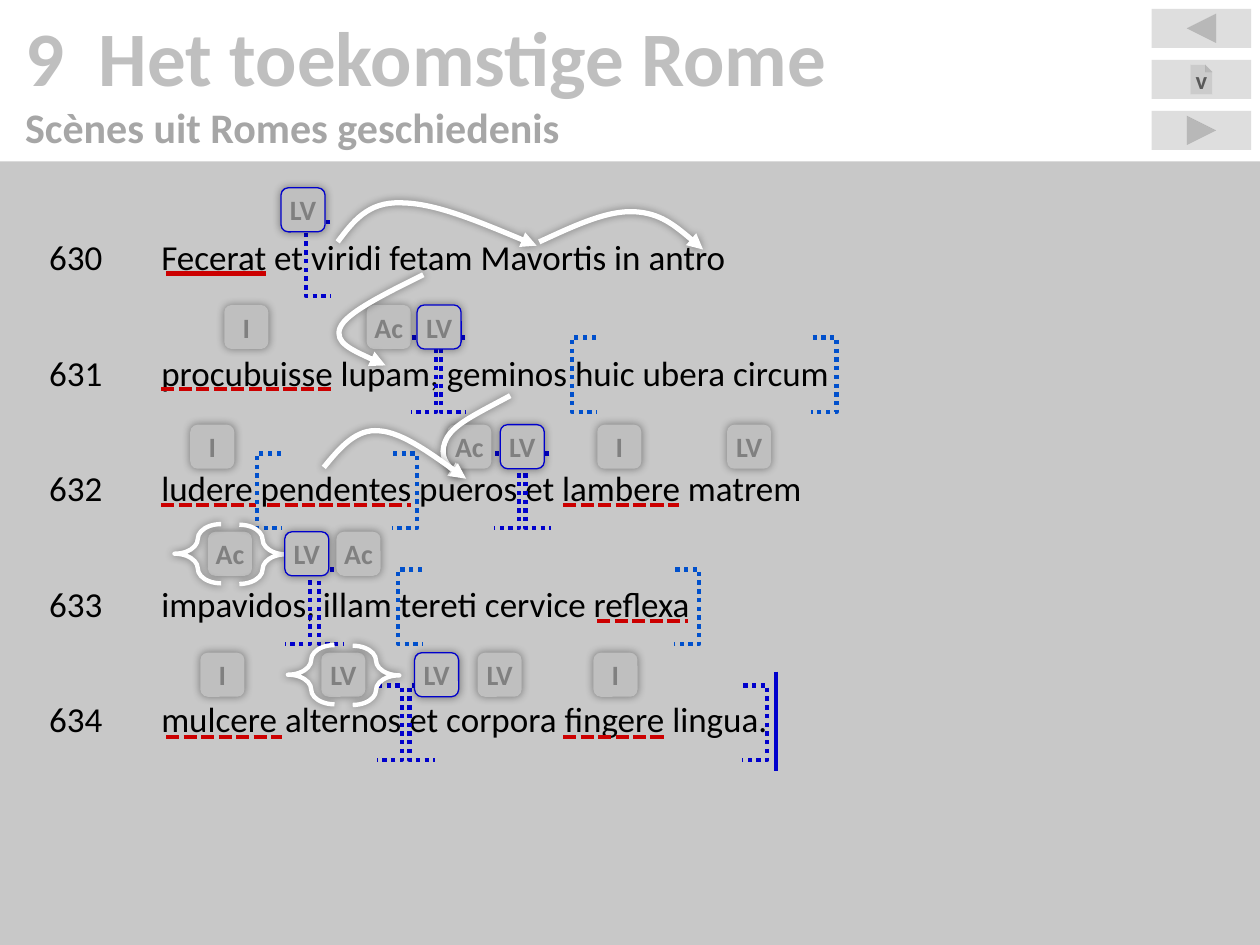
import pptx
import pptx.util
from lxml import etree
from pptx.dml.color import RGBColor
from pptx.enum.dml import MSO_LINE
from pptx.enum.shapes import MSO_CONNECTOR, MSO_SHAPE
from pptx.enum.text import MSO_ANCHOR, PP_ALIGN
from pptx.oxml.ns import qn

# The grid: 100 columns by 75 rows; every length below counts in these.
WIDTH, HEIGHT = pptx.util.Inches(10), pptx.util.Inches(7.5)
COLUMN, ROW = WIDTH / 100, HEIGHT / 75

FONT = "Calibri"
BLACK = RGBColor(0x00, 0x00, 0x00)
WHITE = RGBColor(0xFF, 0xFF, 0xFF)
GREY = RGBColor(0xBF, 0xBF, 0xBF)
SUBTITLE_GREY = RGBColor(0xA6, 0xA6, 0xA6)
TAG_GREY = RGBColor(0x80, 0x80, 0x80)
DARK_GREY = RGBColor(0x59, 0x59, 0x59)
RED = RGBColor(0xCC, 0x00, 0x00)
BLUE = RGBColor(0x00, 0x00, 0xCC)
LIGHT_BLUE = RGBColor(0x00, 0x50, 0xCC)

FIRST_VERSE, VERSE_PITCH = 12.5, 9.2
TAG_SIZE = 3.5

# Per verse: text, row of the tags, underlines (from, to, dash),
# brackets (column, direction, colour), tags (column, label, style), arrows (points).
VERSES = [
    ("630\tFecerat et viridi fetam Mavortis in antro", 2.4,
     [(13.2, 21.1, None)],
     [(24.3, 1, BLUE)],
     [(22.3, "LV", "outlined")],
     [[(26.8, 6.7), (28, 5.1), (29.2, 3.5), (31.8, 3.6), (34.5, 3.6), (38.5, 5.3), (42.6, 7)],
      [(42.8, 6.7), (45.4, 5.5), (48.1, 4.2), (50.3, 4.3), (52.4, 4.4), (54.1, 5.8), (55.8, 7.3)]]),
    ("631\tprocubuisse lupam, geminos huic ubera circum", 2.5,
     [(12.8, 26.3, MSO_LINE.SQUARE_DOT)],
     [(34.6, -1, BLUE), (35, 1, BLUE), (45.4, 1, LIGHT_BLUE), (66.4, -1, LIGHT_BLUE)],
     [(17.8, "I", "plain"), (29.1, "Ac", "plain"), (33.1, "LV", "outlined")],
     [[(33.6, 0.1), (30.6, 1.6), (27.5, 3.1), (27, 4.3), (26.5, 5.5), (28.6, 6.4), (30.6, 7.3)]]),
    ("632\tludere pendentes pueros et lambere matrem", 2.8,
     [(12.8, 20.3, MSO_LINE.SQUARE_DOT), (21.2, 32.6, MSO_LINE.SQUARE_DOT),
      (44.7, 53.9, MSO_LINE.SQUARE_DOT)],
     [(20.4, 1, LIGHT_BLUE), (33.1, -1, LIGHT_BLUE), (41.2, -1, BLUE), (41.7, 1, BLUE)],
     [(15.1, "I", "plain"), (35.5, "Ac", "plain"), (39.7, "LV", "outlined"),
      (47.4, "I", "plain"), (57.7, "LV", "plain")],
     [[(40.5, 0.5), (37.7, 2), (36.2, 2.7), (35.5, 3.8), (34.9, 4.9), (35.3, 6.4), (36.9, 7)],
      [(25.7, 6.2), (27, 4.6), (28.3, 3.1), (30.1, 3.3), (32, 3.4), (37, 7.1), (37, 7.1)]]),
    ("633\timpavidos, illam tereti cervice reflexa", 2.1,
     [(47.4, 54.6, MSO_LINE.SQUARE_DOT)],
     [(24.6, -1, BLUE), (25.3, 1, BLUE), (31.6, 1, LIGHT_BLUE), (55.5, -1, LIGHT_BLUE)],
     [(16.5, "Ac", "braced"), (22.6, "LV", "outlined"), (26.7, "Ac", "plain")],
     []),
    ("634\tmulcere alternos et corpora fingere lingua.", 2.5,
     [(13.2, 22.4, MSO_LINE.SQUARE_DOT), (44.7, 53, MSO_LINE.SQUARE_DOT)],
     [(31.9, -1, BLUE), (32.5, 1, BLUE), (60.9, -1, BLUE)],
     [(15.9, "I", "plain"), (25.5, "LV", "braced"), (32.9, "LV", "outlined"),
      (37.9, "LV", "plain"), (47.1, "I", "plain")],
     []),
]


def to_emu(x, y):
    return round(x * COLUMN), round(y * ROW)


def add_span(para, text, size, color, bold=False):
    span = para.add_run()
    span.text = text
    span.font.name, span.font.size = FONT, pptx.util.Pt(size)
    span.font.color.rgb, span.font.bold = color, bold


def style_line(line, color, width, dash=None):
    line.color.rgb, line.width = color, pptx.util.Pt(width)
    if dash is not None:
        line.dash_style = dash


def add_glow(shape):
    """Give the shape a soft shadow on all sides."""
    shape.shadow.inherit = False
    effects = shape.element.spPr.find(qn("a:effectLst"))
    glow = etree.SubElement(effects, qn("a:outerShdw"), blurRad=str(pptx.util.Pt(5)), dist="0", dir="0")
    color = etree.SubElement(glow, qn("a:srgbClr"), val="000000")
    etree.SubElement(color, qn("a:alpha"), val="40000")


def add_block(page, kind, box, opacity=100):
    left, top, width, height = box
    shape = page.shapes.add_shape(kind, *to_emu(left, top), *to_emu(width, height))
    shape.shadow.inherit = False
    shape.fill.solid()
    shape.fill.fore_color.rgb = GREY
    shape.line.fill.background()
    if opacity < 100:
        color = shape.element.spPr.find(qn("a:solidFill"))[0]
        etree.SubElement(color, qn("a:alpha"), val=str(opacity * 1000))
    return shape


def set_margins(frame, across, down):
    frame.margin_left = frame.margin_right = round(across * COLUMN)
    frame.margin_top = frame.margin_bottom = round(down * ROW)


def center_text(shape, text, size, color):
    frame = shape.text_frame
    set_margins(frame, 0, 0)
    frame.vertical_anchor = MSO_ANCHOR.MIDDLE
    frame.paragraphs[0].alignment = PP_ALIGN.CENTER
    add_span(frame.paragraphs[0], text, size, color, True)


def add_rule(page, start, end, color, dash=None):
    rule = page.shapes.add_connector(MSO_CONNECTOR.STRAIGHT, *to_emu(*start), *to_emu(*end))
    style_line(rule.line, color, 2.5, dash)
    etree.SubElement(rule.element.spPr, qn("a:effectLst"))


def add_outline(page, points):
    points = [to_emu(*point) for point in points]
    builder = page.shapes.build_freeform(*points[0], scale=1.0)
    builder.add_line_segments(points[1:], close=False)
    shape = builder.convert_to_shape()
    shape.fill.background()
    shape.shadow.inherit = False
    return shape


def add_bracket(page, x, top, direction, color):
    bottom = top + 5.9
    points = [(x + 1.9 * direction, top), (x, top), (x, bottom), (x + 2 * direction, bottom)]
    style_line(add_outline(page, points).line, color, 2.5, MSO_LINE.ROUND_DOT)


def add_arrow(page, points):
    """Draw a Bézier arrow: a start, then two handles and an end per curve."""
    arrow = add_outline(page, points)
    corners = list(arrow.element.iter(qn("a:lnTo")))
    track = corners[0].getparent()
    for first in range(0, len(corners), 3):
        curve = etree.SubElement(track, qn("a:cubicBezTo"))
        for corner in corners[first:first + 3]:
            curve.append(corner[0])
            track.remove(corner)
    style_line(arrow.line, WHITE, 3)
    etree.SubElement(arrow.element.spPr.find(qn("a:ln")), qn("a:tailEnd"), type="triangle")
    add_glow(arrow)


def add_brace(page, left, top, mirrored):
    brace = add_block(page, MSO_SHAPE.LEFT_BRACE, (left, top, 3.7, 4.7))
    brace.fill.background()
    brace.adjustments[0] = 0.352
    if mirrored:
        brace.element.spPr.find(qn("a:xfrm")).set("flipH", "1")
    style_line(brace.line, WHITE, 2.5)
    add_glow(brace)


def add_tag(page, left, top, label, style):
    tag = add_block(page, MSO_SHAPE.ROUNDED_RECTANGLE, (left, top, TAG_SIZE, TAG_SIZE))
    if style == "outlined":
        style_line(tag.line, BLUE, 0.75)
    add_glow(tag)
    center_text(tag, label, 16, TAG_GREY)
    if style == "braced":
        add_brace(page, left - 2.65, top - 0.6, False)
        add_brace(page, left + 2.5, top - 0.55, True)


def add_heading(page, box):
    left, top, width, height = box
    frame = page.shapes.add_textbox(*to_emu(left, top), *to_emu(width, height)).text_frame
    frame.word_wrap = True
    frame.vertical_anchor = MSO_ANCHOR.MIDDLE
    set_margins(frame, 2, 2)
    add_span(frame.paragraphs[0], "9  Het toekomstige Rome", 44, GREY, True)
    add_span(frame.add_paragraph(), "Scènes uit Romes geschiedenis", 24, SUBTITLE_GREY, True)


def add_poem(page, box):
    frame = add_block(page, MSO_SHAPE.RECTANGLE, box, 85).text_frame
    frame.word_wrap = True
    frame.vertical_anchor = MSO_ANCHOR.TOP
    set_margins(frame, 3.9, 5.9)
    for index, verse in enumerate(VERSES):
        para = frame.paragraphs[0] if index == 0 else frame.add_paragraph()
        para.alignment = PP_ALIGN.LEFT
        para.space_after = pptx.util.Pt(42)
        tabs = etree.SubElement(para._p.get_or_add_pPr(), qn("a:tabLst"))
        etree.SubElement(tabs, qn("a:tab"), pos=str(round(8.9 * COLUMN)), algn="l")
        add_span(para, verse[0], 20, BLACK)


def add_navigation(page, box):
    left, top, width, height = box
    kinds = [MSO_SHAPE.ACTION_BUTTON_BACK_OR_PREVIOUS, MSO_SHAPE.ACTION_BUTTON_DOCUMENT,
             MSO_SHAPE.ACTION_BUTTON_FORWARD_OR_NEXT]
    button_height = 3.1
    pitch = (height - button_height) / (len(kinds) - 1)
    for index, kind in enumerate(kinds):
        button = add_block(page, kind, (left, top + index * pitch, width, button_height), 50)
        if kind == MSO_SHAPE.ACTION_BUTTON_DOCUMENT:
            center_text(button, "v", 14, DARK_GREY)


def add_annotations(page, box, verse):
    left, top, width, height = box
    text, tag_row, underlines, brackets, tags, arrows = verse
    for start, end, dash in underlines:
        add_rule(page, (left + start, top + height), (left + end, top + height), RED, dash)
    for x, direction, color in brackets:
        add_bracket(page, left + x, top + 5.1, direction, color)
    for x, label, style in tags:
        add_tag(page, left + x, top + tag_row, label, style)
    for points in arrows:
        add_arrow(page, [(left + x, top + y) for x, y in points])


def main():
    deck = pptx.Presentation()
    deck.slide_width, deck.slide_height = WIDTH, HEIGHT
    page = deck.slides.add_slide(deck.slide_layouts[6])
    add_heading(page, (0, 0, 100, 12.8))
    add_poem(page, (0, 12.8, 100, 62.2))
    add_navigation(page, (91.4, 0.7, 7.9, 11.2))
    for index, verse in enumerate(VERSES):
        add_annotations(page, (0, FIRST_VERSE + index * VERSE_PITCH, 100, VERSE_PITCH), verse)
    # Bar that closes the passage
    add_rule(page, (61.6, 53.3), (61.6, 61.2), BLUE)
    deck.save("out.pptx")


if __name__ == "__main__":
    main()
